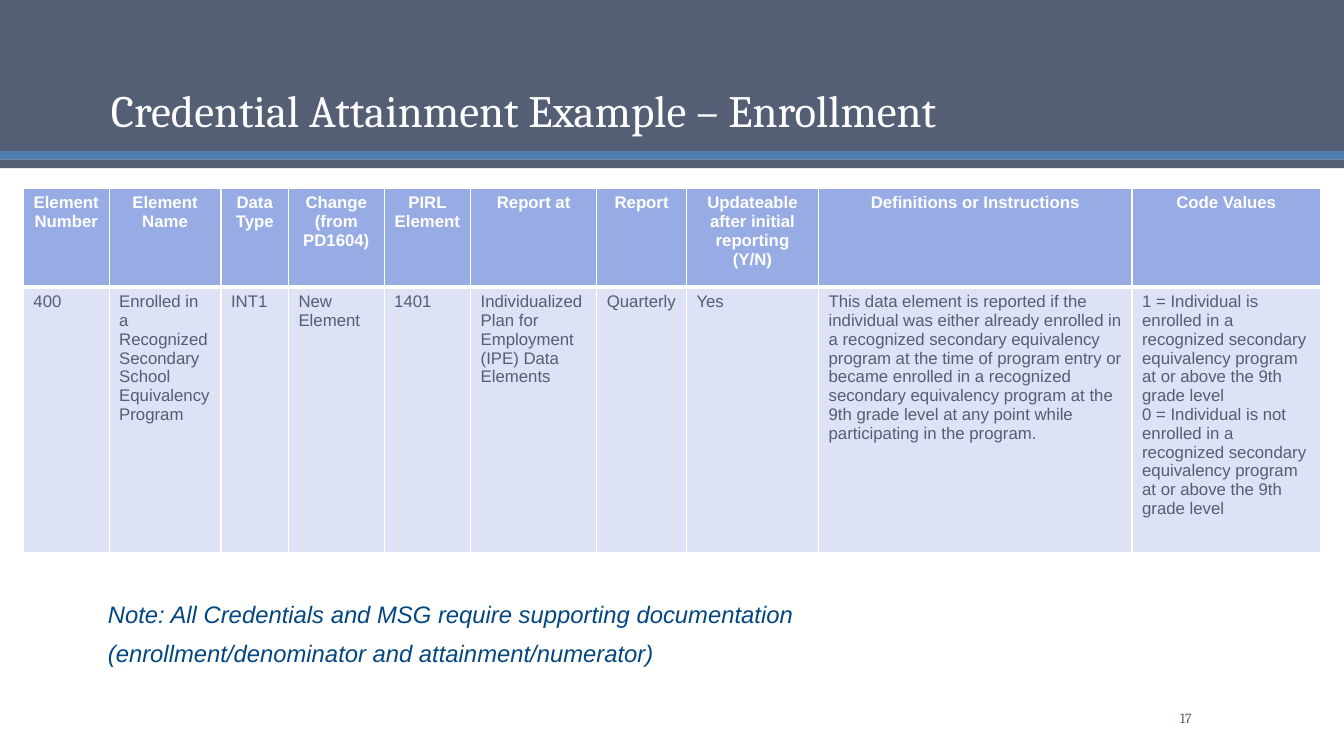
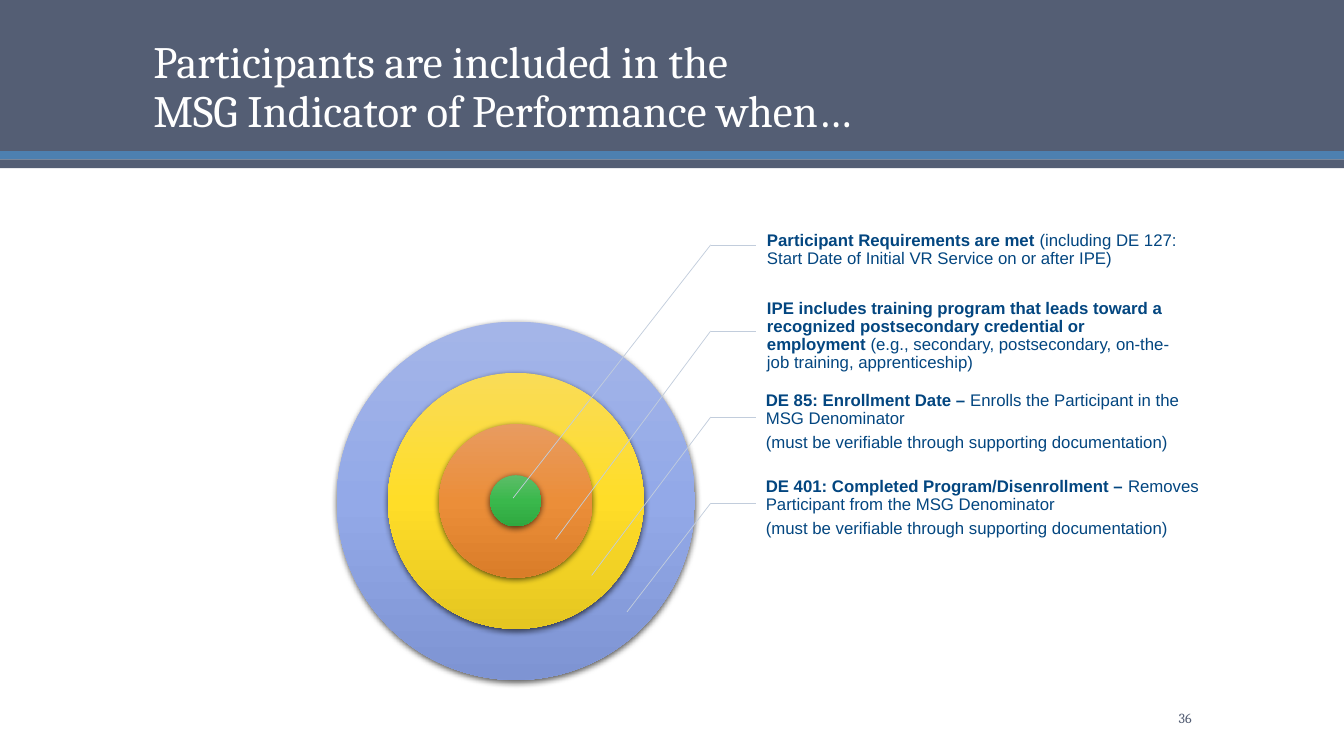
"""Build two slides on credential attainment and the MSG indicator."""
from dataclasses import dataclass

from pptx import Presentation
from pptx.dml.color import RGBColor
from pptx.enum.shapes import MSO_CONNECTOR as Connector, MSO_SHAPE as Shape
from pptx.enum.text import MSO_ANCHOR as Anchor, MSO_AUTO_SIZE as AutoSize, PP_ALIGN as Align
from pptx.oxml import parse_xml
from pptx.oxml.ns import nsdecls
from pptx.util import Cm, Pt


@dataclass(frozen=True)
class Theme:
    slate: str = "545E74"
    blue: str = "4D80B0"
    white: str = "FFFFFF"
    navy: str = "034680"
    header_fill: str = "97ABE4"
    body_fill: str = "DDE2F5"
    leader: str = "C2CDDC"
    heading_font: str = "Cambria"
    text_font: str = "Arial"
    title_size: float = 32
    note_size: float = 17
    text_size: float = 12
    number_size: float = 10


THEME = Theme()
SLIDE_WIDTH, SLIDE_HEIGHT = 33.87, 19.05
RIGHT_EDGE = 30.28
BANDS = [(0, 3.81, THEME.slate), (3.81, 0.21, THEME.blue), (4.02, 0.22, THEME.slate)]

TABLE_TITLE = "Credential Attainment Example – Enrollment"
COLUMNS = [
    (2.16, "Element Number", ["400"]),
    (2.82, "Element Name", ["Enrolled in a Recognized Secondary School Equivalency Program"]),
    (1.7, "Data Type", ["INT1"]),
    (2.41, "Change (from PD1604)", ["New Element"]),
    (2.18, "PIRL Element", ["1401"]),
    (3.18, "Report at", ["Individualized Plan for Employment (IPE) Data Elements"]),
    (2.26, "Report", ["Quarterly"]),
    (3.33, "Updateable after initial reporting (Y/N)", ["Yes"]),
    (7.9, "Definitions or Instructions", [
        "This data element is reported if the individual was either already enrolled in a "
        "recognized secondary equivalency program at the time of program entry or became "
        "enrolled in a recognized secondary equivalency program at the 9th grade level at "
        "any point while participating in the program."]),
    (4.75, "Code Values", [
        "1 = Individual is enrolled in a recognized secondary equivalency program at or "
        "above the 9th grade level",
        "0 = Individual is not enrolled in a recognized secondary equivalency program at or "
        "above the 9th grade level"]),
]
ROW_HEIGHTS = [2.49, 6.68]
NOTE = [
    "Note: All Credentials and MSG require supporting documentation",
    "(enrollment/denominator and attainment/numerator)",
]

TARGET_TITLE = "Participants are included in the\nMSG Indicator of Performance when…"
TARGET_CENTRE = (13, 12.62)
RING_UNIT = 1.29
RINGS = [
    (7, ("A4B5E8", "93A9E8", "7E94D3")),
    (5, ("F9DC57", "FFDD28", "E5C621")),
    (3, ("E89B60", "EB8E39", "DA7D29")),
    (1, ("5DBD68", "3AB84C", "2FA840")),
]
VERIFIABLE = [("(must be verifiable through supporting documentation)", False)]
CALLOUTS = [
    (10.87, 0.33, (12.93, 12.55), [[
        ("Participant Requirements are met ", True),
        ("(including DE 127: Start Date of Initial VR Service on or after IPE)", False)]]),
    (10.67, 0.33, (14, 13.59), [[
        ("IPE includes training program that leads toward a recognized postsecondary "
         "credential or employment ", True),
        ("(e.g., secondary, postsecondary, on-the-job training, apprenticeship)", False)]]),
    (11.28, 0.3, (14.91, 14.5), [[
        ("DE 85: Enrollment Date – ", True),
        ("Enrolls the Participant in the MSG Denominator", False)], VERIFIABLE]),
    (11.28, 0.3, (15.8, 15.42), [[
        ("DE 401: Completed Program/Disenrollment – ", True),
        ("Removes Participant from the MSG Denominator", False)], VERIFIABLE]),
]
CALLOUT_LEFT, CALLOUT_TOP, CALLOUT_HEIGHT = 19, 5.21, 2.17
ELBOW_X, LEADER_END_X, LEADER_DROP = 17.91, 19.05, 0.96


def write(frame, paragraphs, size, color, font=THEME.text_font, italic=False,
          align=Align.LEFT, spacing=1.0, gap=0):
    """Fill a text frame with paragraphs of (text, bold) runs."""
    frame.word_wrap = True
    for index, runs in enumerate(paragraphs):
        para = frame.add_paragraph() if index else frame.paragraphs[0]
        para.alignment = align
        para.line_spacing = spacing
        if index and gap:
            para.space_before = Pt(gap)
        for text, bold in runs:
            for number, line in enumerate(text.split("\n")):
                if number:
                    para.add_line_break()
                span = para.add_run()
                span.text = line
                span.font.name, span.font.size = font, Pt(size)
                span.font.bold, span.font.italic = bold, italic
                span.font.color.rgb = RGBColor.from_string(color)


def plain(texts, bold=False):
    """Turn strings into one-run paragraphs."""
    return [[(text, bold)] for text in texts]


def add_bands(deck, layout):
    """Put the title bands behind everything on the layout."""
    page = deck.slides[0]
    for index, (top, height, color) in enumerate(BANDS):
        band = page.shapes.add_shape(Shape.RECTANGLE, 0, Cm(top), Cm(SLIDE_WIDTH), Cm(height))
        band.fill.solid()
        band.fill.fore_color.rgb = RGBColor.from_string(color)
        band.line.fill.background()
        band.shadow.inherit = False
        layout.shapes.element.insert(2 + index, band.element)


def add_page(deck, layout, title, left, number):
    """Add a page with its title and page number."""
    page = deck.slides.add_slide(layout)
    box = page.shapes.title
    box.left, box.top = Cm(left), Cm(0.71)
    box.width, box.height = Cm(RIGHT_EDGE - left), Cm(2.87)
    frame = box.text_frame
    frame.auto_size = AutoSize.NONE
    frame.vertical_anchor = Anchor.BOTTOM
    write(frame, plain([title]), THEME.title_size, THEME.white, THEME.heading_font, spacing=0.9)
    box = page.shapes.add_textbox(Cm(26.47), Cm(17.7), Cm(3.81), Cm(0.76))
    box.text_frame.vertical_anchor = Anchor.MIDDLE
    write(box.text_frame, plain([number]), THEME.number_size, THEME.slate,
          THEME.heading_font, align=Align.RIGHT)
    return page


def set_borders(cell, widths):
    """Draw white borders on a cell, given as side and points."""
    for index, (side, width) in enumerate(widths.items()):
        cell._tc.get_or_add_tcPr().insert(index, parse_xml(
            f'<a:ln{side} {nsdecls("a")} w="{Pt(width)}"><a:solidFill>'
            f'<a:srgbClr val="{THEME.white}"/></a:solidFill></a:ln{side}>'))


def add_element_table(page):
    """Add the data element table."""
    widths = [width for width, _, _ in COLUMNS]
    table = page.shapes.add_table(len(ROW_HEIGHTS), len(COLUMNS), Cm(0.59), Cm(4.75),
                                  Cm(sum(widths)), Cm(sum(ROW_HEIGHTS))).table
    for row, height in zip(table.rows, ROW_HEIGHTS):
        row.height = Cm(height)
    for index, (width, heading, body) in enumerate(COLUMNS):
        table.columns[index].width = Cm(width)
        styles = [
            (plain([heading], True), THEME.header_fill, THEME.white, Align.CENTER, (1, 3)),
            (plain(body), THEME.body_fill, THEME.slate, Align.LEFT, (3, 1)),
        ]
        for row, (paragraphs, fill, color, align, (top, bottom)) in enumerate(styles):
            cell = table.cell(row, index)
            cell.fill.solid()
            cell.fill.fore_color.rgb = RGBColor.from_string(fill)
            set_borders(cell, {"L": 1, "R": 1, "T": top, "B": bottom})
            write(cell.text_frame, paragraphs, THEME.text_size, color, align=align)


def add_note(page):
    """Add the note below the table."""
    box = page.shapes.add_textbox(Cm(1.7), Cm(15.06), Cm(26.97), Cm(2.77))
    box.text_frame.margin_left = Cm(1.02)
    write(box.text_frame, plain(NOTE), THEME.note_size, THEME.navy, italic=True,
          spacing=0.9, gap=10)


def add_ring(page, units, colors):
    """Add one shaded disc of the target."""
    size = units * RING_UNIT
    left, top = (centre - size / 2 for centre in TARGET_CENTRE)
    ring = page.shapes.add_shape(Shape.OVAL, Cm(left), Cm(top), Cm(size), Cm(size))
    stops = "".join(f'<a:gs pos="{index * 50000}"><a:srgbClr val="{color}"/></a:gs>'
                    for index, color in enumerate(colors))
    props = ring.element.spPr
    props.append(parse_xml(f'<a:gradFill {nsdecls("a")} rotWithShape="1"><a:gsLst>{stops}'
                           '</a:gsLst><a:lin ang="5400000" scaled="0"/></a:gradFill>'))
    ring.line.fill.background()
    props.append(parse_xml(
        f'<a:effectLst {nsdecls("a")}><a:outerShdw blurRad="{Pt(4.5)}" dist="{Pt(1.5)}" '
        'dir="5400000" algn="ctr" rotWithShape="0"><a:srgbClr val="000000">'
        '<a:alpha val="63000"/></a:srgbClr></a:outerShdw></a:effectLst>'))


def add_leader(page, start, end):
    """Add a thin straight leader line."""
    line = page.shapes.add_connector(Connector.STRAIGHT, *map(Cm, start + end))
    line.line.color.rgb = RGBColor.from_string(THEME.leader)
    line.line.width = Pt(0.5)
    line.element.spPr.append(parse_xml(f'<a:effectLst {nsdecls("a")}/>'))


def add_callout(page, index, width, inset, target, paragraphs):
    """Add a label and its bent leader."""
    top = CALLOUT_TOP + index * CALLOUT_HEIGHT
    box = page.shapes.add_textbox(Cm(CALLOUT_LEFT), Cm(top), Cm(width), Cm(CALLOUT_HEIGHT))
    frame = box.text_frame
    frame.vertical_anchor = Anchor.MIDDLE
    frame.margin_left = Cm(inset)
    frame.margin_top = frame.margin_right = frame.margin_bottom = Cm(0.05)
    write(frame, paragraphs, THEME.text_size, THEME.navy, spacing=0.9, gap=4.2)
    elbow = (ELBOW_X, top + LEADER_DROP)
    for end in ((LEADER_END_X, elbow[1]), target):
        add_leader(page, elbow, end)


def main():
    """Build and save the deck."""
    deck = Presentation()
    deck.slide_width, deck.slide_height = Cm(SLIDE_WIDTH), Cm(SLIDE_HEIGHT)
    layout = deck.slide_layouts[5]

    page = add_page(deck, layout, TABLE_TITLE, 2.54, "17")
    add_bands(deck, layout)
    add_element_table(page)
    add_note(page)

    page = add_page(deck, layout, TARGET_TITLE, 3.61, "36")
    for units, colors in RINGS:
        add_ring(page, units, colors)
    for index, callout in enumerate(CALLOUTS):
        add_callout(page, index, *callout)

    deck.save("out.pptx")


if __name__ == "__main__":
    main()
